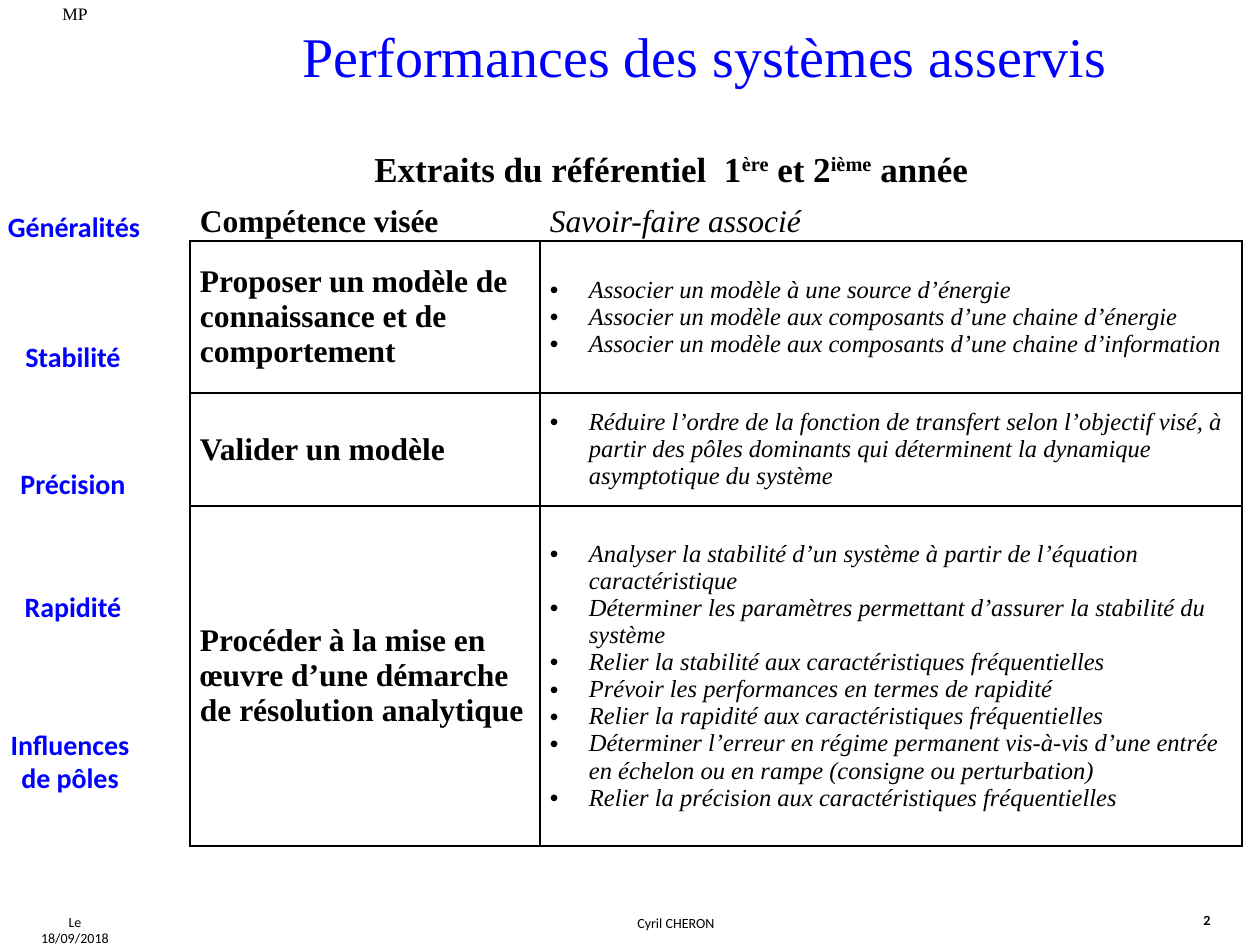
from lxml import etree
from pptx import Presentation
from pptx.dml.color import RGBColor
from pptx.enum.text import MSO_ANCHOR, MSO_AUTO_SIZE, PP_ALIGN
from pptx.oxml.ns import qn
from pptx.util import Emu, Pt

CENTER, LEFT = PP_ALIGN.CENTER, PP_ALIGN.LEFT
MIDDLE = MSO_ANCHOR.MIDDLE
GROW = MSO_AUTO_SIZE.SHAPE_TO_FIT_TEXT
SERIF, SANS = "Times New Roman", "Calibri"
COLORS = {"blue": "0000FF", "black": "000000", "white": "FFFFFF"}

CHAPTERS = [
    ("Généralités", 1, 203, 47),
    ("Stabilité", 0, 333, 47),
    ("Précision", 0, 460, 47),
    ("Rapidité", 0, 583, 47),
    ("Influences de pôles", -3, 721, 81),
]
SUBTITLE = [
    ("Extraits du référentiel  1", False),
    ("ère", True),
    (" et 2", False),
    ("ième", True),
    (" année", False),
]
HEADINGS = ("Compétence visée", "Savoir-faire associé")
SKILLS = [
    ("Proposer un modèle de connaissance et de comportement", [
        "Associer un modèle à une source d’énergie",
        "Associer un modèle aux composants d’une chaine d’énergie",
        "Associer un modèle aux composants d’une chaine d’information",
    ]),
    ("Valider un modèle", [
        "Réduire l’ordre de la fonction de transfert selon l’objectif visé, à partir "
        "des pôles dominants qui déterminent la dynamique asymptotique du système",
    ]),
    ("Procéder à la mise en œuvre d’une démarche de résolution analytique", [
        "Analyser la stabilité d’un système à partir de l’équation caractéristique",
        "Déterminer les paramètres permettant d’assurer la stabilité du système",
        "Relier la stabilité aux caractéristiques fréquentielles",
        "Prévoir les performances en termes de rapidité",
        "Relier la rapidité aux caractéristiques fréquentielles",
        "Déterminer l’erreur en régime permanent vis-à-vis d’une entrée en échelon "
        "ou en rampe (consigne ou perturbation)",
        "Relier la précision aux caractéristiques fréquentielles",
    ]),
]
COLUMN_WIDTHS = (350, 702)
ROW_HEIGHTS = (38, 152, 113, 340)


def px(length):
    return Emu(round(length * 914400 / 126))


def style(para, size, font=SERIF, color="black", bold=False, italic=False):
    para.font.size = Pt(size)
    para.font.name = font
    para.font.bold = bold
    para.font.italic = italic
    para.font.color.rgb = RGBColor.from_string(COLORS[color])


def add_text(page, spans, place, size, align=CENTER, wrap=True, side=None, **look):
    box = page.shapes.add_textbox(*map(px, place))
    frame = box.text_frame
    frame.word_wrap = wrap
    frame.auto_size = GROW
    if side is not None:
        frame.margin_left = frame.margin_right = px(side)
    para = frame.paragraphs[0]
    para.alignment = align
    for text, raised in spans:
        span = para.add_run()
        span.text = text
        if raised:
            span._r.get_or_add_rPr().set("baseline", "30000")
    style(para, size, **look)


def add_bullet(para):
    properties = para._p.get_or_add_pPr()
    properties.set("marL", str(px(39)))
    properties.set("indent", str(px(-39)))
    etree.SubElement(properties, qn("a:buFont")).set("typeface", "Arial")
    etree.SubElement(properties, qn("a:buChar")).set("char", "•")


def set_borders(cell, edges):
    properties = cell._tc.get_or_add_tcPr()
    for index, (side, color) in enumerate(zip("LRTB", edges)):
        line = etree.Element(qn(f"a:ln{side}"), w=str(Pt(1)))
        fill = etree.SubElement(line, qn("a:solidFill"))
        etree.SubElement(fill, qn("a:srgbClr")).set("val", COLORS[color])
        properties.insert(index, line)


def fill_cell(cell, lines, edges, bullets=False, **look):
    cell.vertical_anchor = MIDDLE
    cell.margin_left = cell.margin_right = px(10)
    cell.margin_top = cell.margin_bottom = 0
    cell.fill.background()
    set_borders(cell, edges)
    cell.text_frame.text = "\n".join(lines)
    for para in cell.text_frame.paragraphs:
        if bullets:
            add_bullet(para)
        style(para, **look)


def add_skill_table(page):
    frame = page.shapes.add_table(
        len(ROW_HEIGHTS), len(COLUMN_WIDTHS),
        px(190), px(203), px(sum(COLUMN_WIDTHS)), px(sum(ROW_HEIGHTS)))
    table = frame.table
    table.horz_banding = False
    for column, width in zip(table.columns, COLUMN_WIDTHS):
        column.width = px(width)
    for row, height in zip(table.rows, ROW_HEIGHTS):
        row.height = px(height)

    heading_edges = ("white", "white", "white", "black")
    body_edges = ("black",) * 4
    for index, heading in enumerate(HEADINGS):
        fill_cell(table.cell(0, index), [heading], heading_edges,
                  size=18, bold=index == 0, italic=index == 1)
    for index, (skill, abilities) in enumerate(SKILLS, start=1):
        fill_cell(table.cell(index, 0), [skill], body_edges, size=18, bold=True)
        fill_cell(table.cell(index, 1), abilities, body_edges,
                  bullets=True, size=14, italic=True)


def main():
    deck = Presentation()
    deck.slide_width, deck.slide_height = px(1260), px(945)
    page = deck.slides.add_slide(deck.slide_layouts[6])

    add_text(page, [("Le 18/09/2018", False)], (21, 907, 108, 30), 8,
             wrap=False, font=SANS)
    add_text(page, [("Cyril CHERON", False)], (157, 908, 1038, 30), 8, font=SANS)
    add_text(page, [("2", False)], (1191, 905, 49, 30), 8,
             align=LEFT, wrap=False, font=SANS, bold=True)
    add_text(page, [("MP", False)], (21, -3, 108, 34), 10)
    for name, left, top, height in CHAPTERS:
        add_text(page, [(name, False)], (left, top, 146, height), 16,
                 side=5, font=SANS, color="blue", bold=True)
    add_text(page, [("Performances des systèmes asservis", False)],
             (273, 15, 863, 81), 32, wrap=False, color="blue")
    add_text(page, SUBTITLE, (362, 141, 633, 55), 20,
             align=LEFT, wrap=False, bold=True)
    add_skill_table(page)
    deck.save("out.pptx")


if __name__ == "__main__":
    main()
